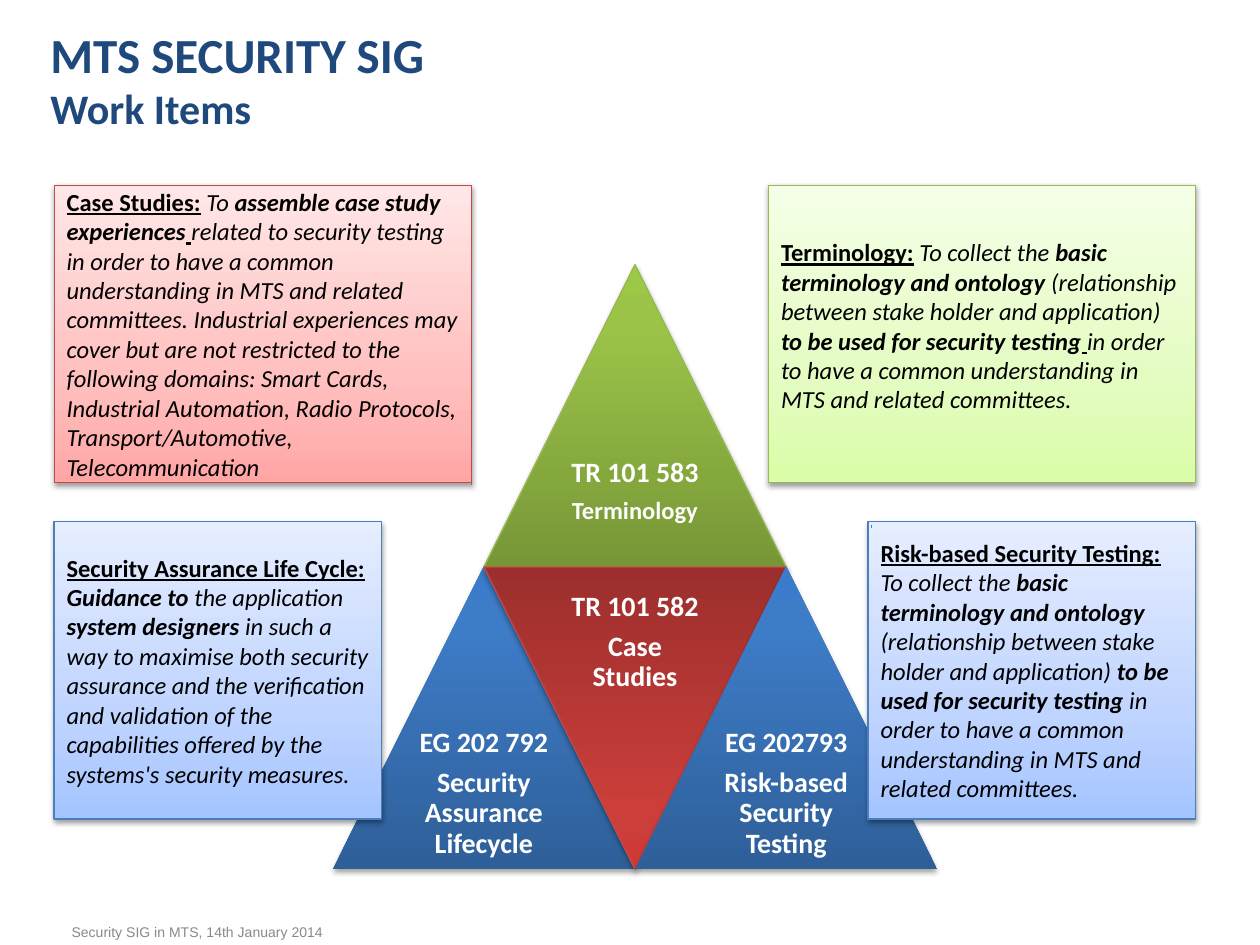
import copy
import pptx
import pptx.util
import pptx.dml.color
import pptx.enum.shapes
import pptx.enum.text
import pptx.oxml.ns
from lxml import etree

Inches, Pt = pptx.util.Inches, pptx.util.Pt
RGB = pptx.dml.color.RGBColor.from_string
SHAPE = pptx.enum.shapes.MSO_SHAPE
ALIGN = pptx.enum.text.PP_ALIGN
MIDDLE = pptx.enum.text.MSO_ANCHOR.MIDDLE
qn = pptx.oxml.ns.qn

THEME = {
    "font": "Calibri", "title": "1F497D", "sub": 24, "head": 28,
    "foot": 8, "gray": "898989", "body": 14, "label": 16,
    "ink": "000000", "white": "FFFFFF",
    "green": {"deep": [(0, "779737"), (0.8, "9BC348"), (1, "9DC746")],
              "pale": [(0, "DAFDA7"), (0.35, "E4FCC2"), (1, "F5FFE7")],
              "line": "98B955"},
    "blue": {"deep": [(0, "2F5F99"), (0.8, "3D7CC7"), (1, "3A7CCB")],
             "pale": [(0, "A4C4FF"), (0.35, "BFD4FF"), (1, "E6EEFF")],
             "line": "4B7EBC"},
    "red": {"deep": [(0, "9C2F2D"), (0.8, "CB3E3A"), (1, "CE3B37")],
            "pale": [(0, "FFA6A5"), (0.35, "FFC0BF"), (1, "FFE7E7")],
            "line": "BF4C48"},
}

TITLE = [[("MTS SECURITY SIG", "b", THEME["head"])],
         [("Work Items", "b", THEME["sub"])]]
FOOTER = [[("Security SIG in MTS, 14th January 2014", "")]]

# column, row, hue, outlined, turned, label, name, name size
TILES = [
    (1, 0, "green", True, False, "TR 101 583", "Terminology", 14),
    (0, 1, "blue", False, False, "EG 202 792", "Security Assurance Lifecycle", 16),
    (1, 1, "red", True, True, "TR 101 582", "Case Studies", 16),
    (2, 1, "blue", False, False, "EG 202793", "Risk-based Security Testing", 16),
]

NOTES = [
    {"side": 0, "row": 0, "wide": 3.31, "hue": "red", "tip": (1, 1, 1.01, 1), "foot": 0.05,
     "runs": [("Case Studies:", "bu"), (" ", "b"), ("To ", "i"),
              ("assemble case study experiences", "bi"), (" ", "biu"),
              ("related to security testing in order to have a common understanding in MTS "
               "and related committees. Industrial experiences may cover but are not "
               "restricted to the following domains: Smart Cards, Industrial Automation, "
               "Radio Protocols, Transport/Automotive, Telecommunication", "i")]},
    {"side": 0, "row": 1, "wide": 2.6, "hue": "blue", "tip": (0.49, 1, 0.49, 1), "foot": 0.05,
     "runs": [("Security Assurance Life Cycle: ", "bu"), ("Guidance to ", "bi"),
              ("the application ", "i"), ("system designers ", "bi"),
              ("in such a way to maximise both security assurance and the verification and "
               "validation of the capabilities offered by the systems's security measures.", "i")]},
    {"side": 1, "row": 0, "wide": 3.39, "hue": "green", "tip": (1, 0, 1, 0.01), "foot": 0.18,
     "runs": [("Terminology:", "bu"), (" To collect the ", "i"),
              ("basic terminology and ontology ", "bi"),
              ("(relationship between stake holder and application) ", "i"),
              ("to be used for security testing", "bi"), (" ", "biu"),
              ("in order to have a common understanding in MTS and related committees.", "i")]},
    {"side": 1, "row": 1, "wide": 2.6, "hue": "blue", "tip": (0.01, 0.01, 0.02, 0.01), "foot": 0.05,
     "runs": [("Risk-based Security Testing: ", "bu"), ("To collect the ", "i"),
              ("basic terminology and ontology ", "bi"),
              ("(relationship between stake holder and application) ", "i"),
              ("to be used for security testing ", "bi"),
              ("in order to have a common understanding in MTS and related committees.", "i")]},
]

LEFT, RIGHT, TOP, STEP, HIGH = 0.43, 9.49, 1.47, 2.67, 2.36
SIDE, PEAK_X, PEAK_Y = 2.4, 2.64, 2.1


def write(shape, paras, size=14, color="000000", font="Calibri", align=ALIGN.LEFT,
          inset=(0.1, 0.05, 0.1, 0.05), lead=None, after=None):
    frame = shape.text_frame
    frame.word_wrap = True
    frame.vertical_anchor = MIDDLE
    frame.margin_left, frame.margin_top, frame.margin_right, frame.margin_bottom = map(Inches, inset)
    for i, runs in enumerate(paras):
        para = frame.add_paragraph() if i else frame.paragraphs[0]
        para.alignment = align
        if lead:
            para.line_spacing = lead
        if after:
            para.space_after = Pt(after)
        for text, style, *own in runs:
            run = para.add_run()
            run.text = text
            face = run.font
            face.name, face.size = font, Pt(own[0] if own else size)
            face.color.rgb = RGB(color)
            face.bold, face.italic, face.underline = ("b" in style, "i" in style, "u" in style)


def paint(shape, stops, line, alpha, dist):
    shape.fill.gradient()
    shape.fill.gradient_angle = 90
    slots = shape._element.spPr.find(".//" + qn("a:gsLst"))
    slots.append(copy.deepcopy(slots[0]))
    for slot, (place, color) in zip(shape.fill.gradient_stops, stops):
        slot.position, slot.color.rgb = place, RGB(color)
    if line:
        shape.line.color.rgb = RGB(line)
        shape.line.width = Pt(0.75)
    else:
        shape.line.fill.background()
    shape.shadow.inherit = False
    glow = etree.SubElement(shape._element.spPr.find(qn("a:effectLst")), qn("a:outerShdw"),
                            blurRad=str(Pt(3.1)), dist=str(Pt(dist)), dir="5400000", rotWithShape="0")
    tint = etree.SubElement(glow, qn("a:srgbClr"), val="000000")
    etree.SubElement(tint, qn("a:alpha"), val=str(alpha * 1000))


def tile(group, col, row, hue, edged, turned, label, name, size):
    x, y = PEAK_X + col * SIDE / 2, PEAK_Y + row * SIDE
    shape = group.shapes.add_shape(SHAPE.ISOSCELES_TRIANGLE, *map(Inches, (x, y, SIDE, SIDE)))
    shape.rotation = 180 if turned else 0
    paint(shape, THEME[hue]["deep"], THEME[hue]["line"] if edged else None, 35, 1.8)
    half = SIDE / 2
    box = group.shapes.add_textbox(*map(Inches, (x + half / 2, y + (0 if turned else half), half, half)))
    write(box, [[(label, "b")], [(name, "b", size)]], size=THEME["label"], color=THEME["white"],
          align=ALIGN.CENTER, inset=(0.07,) * 4, lead=0.9, after=5.6)


def note(slide, side, row, wide, hue, tip, foot, runs):
    x = RIGHT - wide if side else LEFT
    shape = slide.shapes.add_shape(SHAPE.LINE_CALLOUT_1, *map(Inches, (x, TOP + row * STEP, wide, HIGH)))
    for i, value in enumerate(tip):
        shape.adjustments[i] = value
    paint(shape, THEME[hue]["pale"], THEME[hue]["line"], 38, 1.6)
    write(shape, [runs], size=THEME["body"], color=THEME["ink"], inset=(0.1, 0.05, 0.1, foot))


def main():
    deck = pptx.Presentation()
    deck.slide_width, deck.slide_height = Inches(10), Inches(7.5)
    slide = deck.slides.add_slide(deck.slide_layouts[5])
    title = slide.shapes.title
    title.left, title.top, title.width, title.height = map(Inches, (0.3, 0, 9, 1.25))
    write(title, TITLE, color=THEME["title"])
    foot = slide.shapes.add_textbox(*map(Inches, (0.47, 7.2, 5.7, 0.4)))
    write(foot, FOOTER, size=THEME["foot"], color=THEME["gray"], font="Arial")
    group = slide.shapes.add_group_shape()
    for item in TILES:
        tile(group, *item)
    for item in NOTES:
        note(slide, **item)
    deck.save("out.pptx")


if __name__ == "__main__":
    main()
